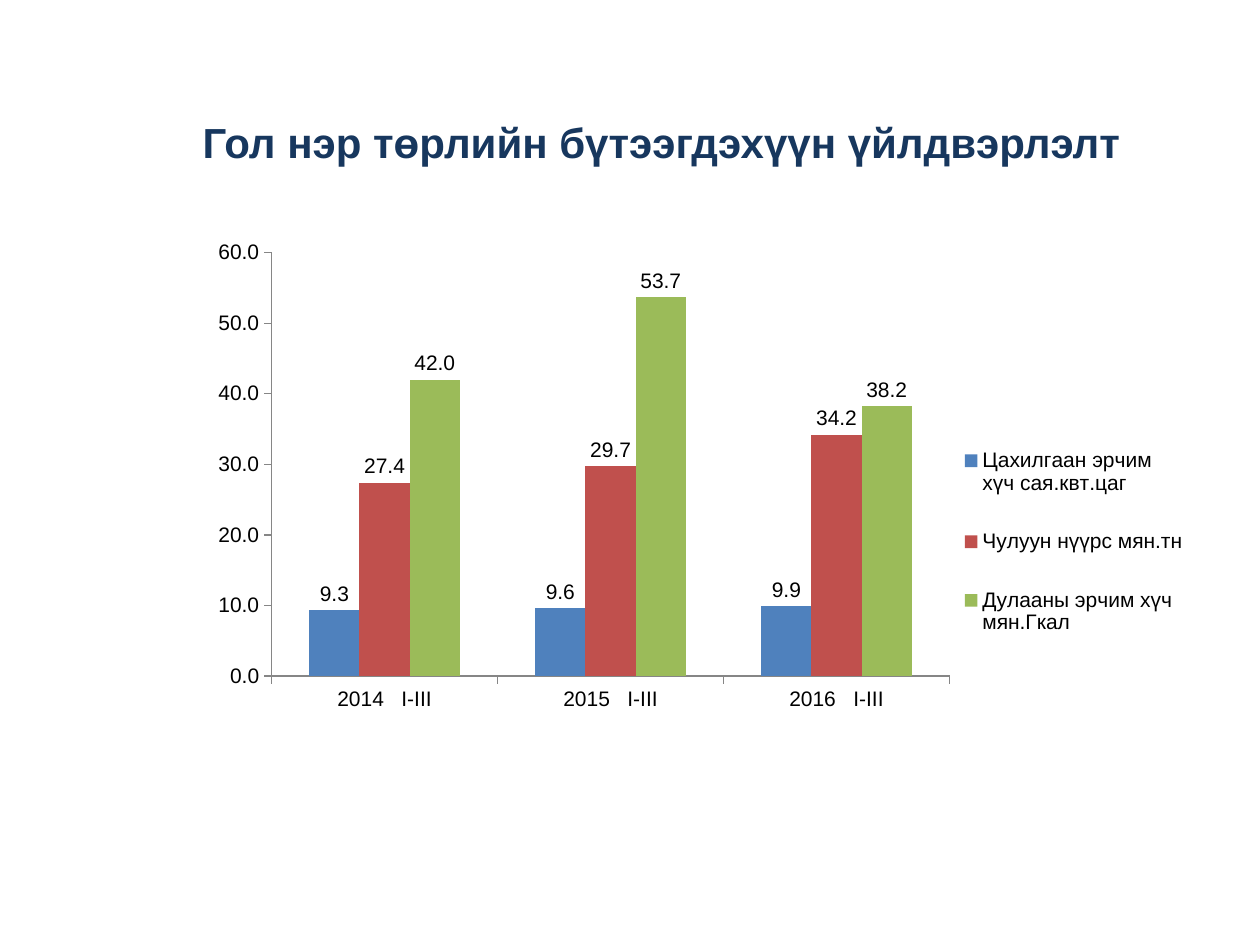
from pptx import Presentation
from pptx.chart.data import CategoryChartData
from pptx.dml.color import RGBColor
from pptx.enum.chart import XL_CHART_TYPE, XL_LABEL_POSITION, XL_LEGEND_POSITION, XL_TICK_MARK
from pptx.enum.text import MSO_ANCHOR, PP_ALIGN
from pptx.oxml import parse_xml
from pptx.oxml.ns import nsdecls, qn
from pptx.util import Inches, Pt

FONT = "Arial"
COLORS = {
    "title": "17375E",
    "text": "000000",
    "axis": "868686",
    "electricity": "4F81BD",
    "coal": "C0504D",
    "heat": "9BBB59",
}
SERIES = [
    ("Цахилгаан эрчим хүч сая.квт.цаг", (9.3, 9.6, 9.9), "electricity"),
    ("Чулуун нүүрс мян.тн", (27.4, 29.7, 34.2), "coal"),
    ("Дулааны эрчим хүч мян.Гкал", (42.0, 53.7, 38.2), "heat"),
]


def color(name):
    return RGBColor.from_string(COLORS[name])


def make_layout(x, y, w, h, target=""):
    """Manual chart layout, in fractions of the chart area."""
    return parse_xml(
        f'<c:layout {nsdecls("c")}><c:manualLayout>{target}'
        '<c:xMode val="edge"/><c:yMode val="edge"/>'
        f'<c:x val="{x}"/><c:y val="{y}"/><c:w val="{w}"/><c:h val="{h}"/>'
        "</c:manualLayout></c:layout>"
    )


prs = Presentation()
prs.slide_width, prs.slide_height = Inches(10), Inches(7.5)
s = prs.slides.add_slide(prs.slide_layouts[6])

# Title
sp = s.shapes.add_textbox(Inches(1), Inches(0.75), Inches(8.5), Inches(0.75))
tf = sp.text_frame
tf.word_wrap = True
tf.vertical_anchor = MSO_ANCHOR.MIDDLE
p = tf.paragraphs[0]
p.alignment = PP_ALIGN.CENTER
r = p.add_run()
r.text = "Гол нэр төрлийн бүтээгдэхүүн үйлдвэрлэлт"
r.font.name, r.font.size, r.font.bold = FONT, Pt(24), True
r.font.color.rgb = color("title")

# Chart
data = CategoryChartData(number_format="0.0")
data.categories = [f"{year}   I-III" for year in (2014, 2015, 2016)]
for name, values, _ in SERIES:
    data.add_series(name, values)
chart = s.shapes.add_chart(
    XL_CHART_TYPE.COLUMN_CLUSTERED,
    Inches(1), Inches(1.75), Inches(8.5), Inches(4.25), data,
).chart
chart.has_title = False
chart.font.name, chart.font.size = FONT, Pt(12)
chart.font.color.rgb = color("text")

# Columns and value labels
plot = chart.plots[0]
plot.vary_by_categories = False
plot.gap_width, plot.overlap = 150, 0
for series, (_, _, key) in zip(plot.series, SERIES):
    series.format.fill.solid()
    series.format.fill.fore_color.rgb = color(key)
    labels = series.data_labels
    labels.show_value = True
    labels.number_format, labels.number_format_is_linked = "0.0", False
    labels.position = XL_LABEL_POSITION.OUTSIDE_END

# Axes
for axis in (chart.category_axis, chart.value_axis):
    axis.has_major_gridlines = False
    axis.major_tick_mark = XL_TICK_MARK.OUTSIDE
    axis.minor_tick_mark = XL_TICK_MARK.NONE
    axis.format.line.color.rgb = color("axis")
    axis.format.line.width = Pt(0.75)
axis = chart.value_axis
axis.minimum_scale, axis.maximum_scale, axis.major_unit = 0, 60, 10
axis.tick_labels.number_format = "0.0"
axis.tick_labels.number_format_is_linked = False

# Legend
chart.has_legend = True
legend = chart.legend
legend.position = XL_LEGEND_POSITION.RIGHT
legend.include_in_layout = False

# Plot and legend positions
plot_area = chart.element.find(".//" + qn("c:plotArea"))
legend_el = chart.element.find(".//" + qn("c:legend"))
for parent in (plot_area, legend_el):
    for old in parent.findall(qn("c:layout")):
        parent.remove(old)
inner = '<c:layoutTarget val="inner"/>'
plot_area.insert(0, make_layout(0.136, 0.06, 0.633, 0.791, inner))
legend_el.find(qn("c:legendPos")).addnext(make_layout(0.78, 0.36, 0.21, 0.48))

prs.save("out.pptx")
